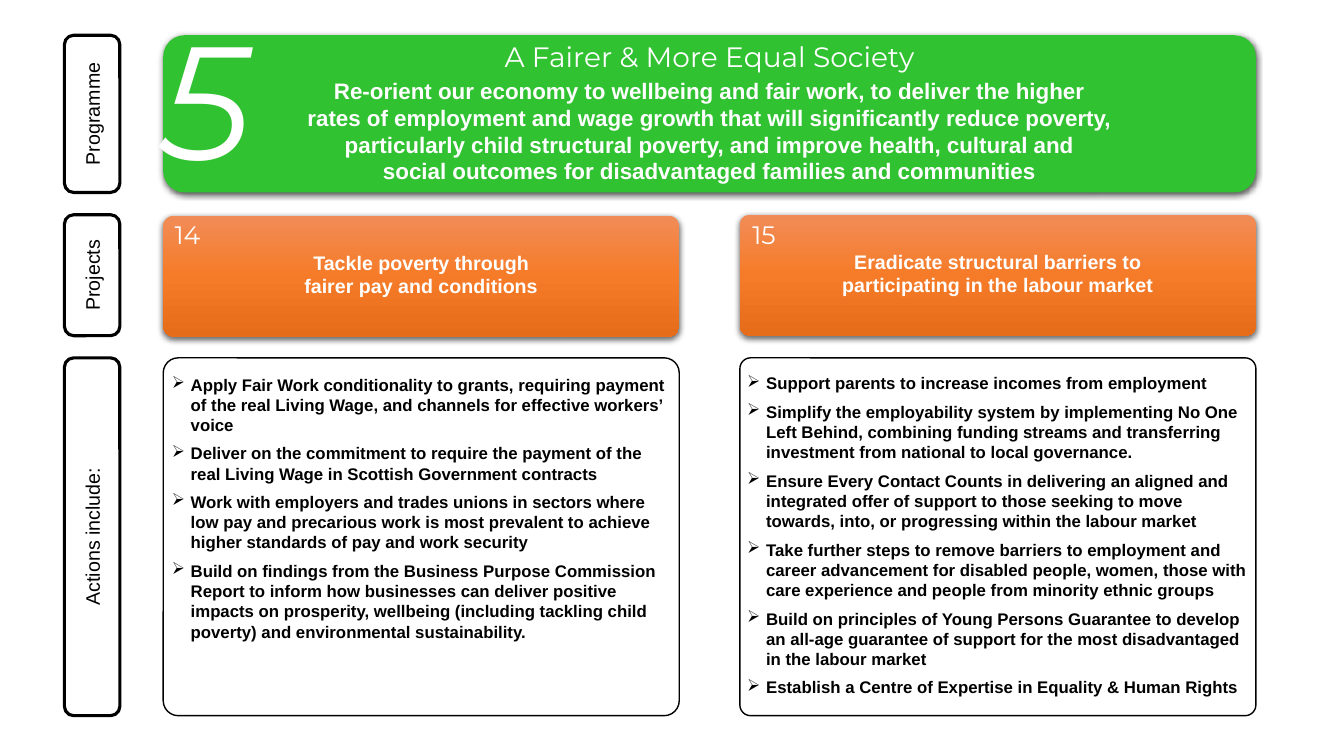
from pptx import Presentation
from pptx.dml.color import RGBColor
from pptx.enum.shapes import MSO_SHAPE as Shape
from pptx.enum.text import MSO_ANCHOR as Anchor, PP_ALIGN as Align
from pptx.oxml import parse_xml
from pptx.oxml.ns import nsdecls, qn
from pptx.util import Pt

BLACK, WHITE, GREEN = "000000", "FFFFFF", "30C230"
ORANGES = ((0, "F18C57"), (50, "F67B28"), (100, "E56C19"))
LABEL_LEFT, LABEL_WIDTH = 46, 39.6
COLUMN_LEFTS, COLUMN_WIDTH = (116.6, 528.5), 368.6
PROGRAMME_ROW, PROJECT_ROW, ACTION_ROW = (25.2, 112.3), (153.4, 86.4), (255.6, 255.6)

PROJECTS = (
    ("14", "Tackle poverty through\nfairer pay and conditions", 0.7, 0.089, 0.042, (
        "Apply Fair Work conditionality to grants, requiring payment of the real Living Wage, "
        "and channels for effective workers’ voice",
        "Deliver on the commitment to require the payment of the real Living Wage in "
        "Scottish Government contracts",
        "Work with employers and trades unions in sectors where low pay and precarious work "
        "is most prevalent to achieve higher standards of pay and work security",
        "Build on findings from the Business Purpose Commission Report to inform how businesses "
        "can deliver positive impacts on prosperity, wellbeing (including tackling child poverty) "
        "and environmental sustainability.")),
    ("15", "Eradicate structural barriers to\nparticipating in the labour market", 0, 0.079, 0.03, (
        "Support parents to increase incomes from employment",
        "Simplify the employability system by implementing No One Left Behind, combining funding "
        "streams and transferring investment from national to local governance.",
        "Ensure Every Contact Counts in delivering an aligned and integrated offer of support to "
        "those seeking to move towards, into, or progressing within the labour market",
        "Take further steps to remove barriers to employment and career advancement for disabled "
        "people, women, those with care experience and people from minority ethnic groups",
        "Build on principles of Young Persons Guarantee to develop an all-age guarantee of support "
        "for the most disadvantaged in the labour market",
        "Establish a Centre of Expertise in Equality & Human Rights")),
)


def color(hex_value):
    return RGBColor.from_string(hex_value)


def set_frame(frame, anchor, insets):
    frame.word_wrap = True
    frame.vertical_anchor = anchor
    (frame.margin_left, frame.margin_top,
     frame.margin_right, frame.margin_bottom) = map(Pt, insets)


def write(paragraph, text, size, ink=WHITE, face="Arial", bold=False, italic=False,
          align=Align.CENTER, after=0):
    paragraph.text = text
    paragraph.alignment = align
    paragraph.space_after = Pt(after)
    font = paragraph.font
    font.name, font.size, font.bold, font.italic = face, Pt(size), bold, italic
    font.color.rgb = color(ink)


def add_panel(slide, box, fill, radius, line_width=0):
    panel = slide.shapes.add_shape(Shape.ROUNDED_RECTANGLE, *map(Pt, box))
    panel.adjustments[0] = radius
    panel.shadow.inherit = False
    panel.fill.solid()
    panel.fill.fore_color.rgb = color(fill)
    if line_width:
        panel.line.color.rgb = color(BLACK)
        panel.line.width = Pt(line_width)
    else:
        panel.line.fill.background()
    return panel


def add_shadow(panel):
    effects = panel._element.spPr.find(qn("a:effectLst"))
    effects.append(parse_xml(
        f'<a:outerShdw {nsdecls("a")} blurRad="{Pt(4.5)}" dist="{Pt(1.5)}" dir="5400000" '
        f'rotWithShape="0"><a:srgbClr val="{BLACK}"><a:alpha val="63000"/></a:srgbClr>'
        '</a:outerShdw>'))


def add_gradient(panel, stops):
    stop_xml = "".join(f'<a:gs pos="{percent * 1000}"><a:srgbClr val="{shade}"/></a:gs>'
                       for percent, shade in stops)
    properties = panel._element.spPr
    properties.replace(properties.find(qn("a:solidFill")), parse_xml(
        f'<a:gradFill {nsdecls("a")} rotWithShape="1"><a:gsLst>{stop_xml}</a:gsLst>'
        '<a:lin ang="5400000" scaled="0"/></a:gradFill>'))


def add_number(slide, box, number, size, italic=False):
    frame = slide.shapes.add_textbox(*map(Pt, box)).text_frame
    set_frame(frame, Anchor.MIDDLE, (7.2, 3.6, 7.2, 3.6))
    write(frame.paragraphs[0], number, size, face="Montserrat", italic=italic)


def add_label(slide, box, caption):
    frame = add_panel(slide, box, WHITE, 0.167, 2.25).text_frame
    set_frame(frame, Anchor.MIDDLE, (3, 0, 3, 0))
    frame._txBody.bodyPr.set("vert", "vert270")
    write(frame.paragraphs[0], caption, 14, BLACK)


def add_programme(slide, box, number, title, aim):
    left, top, _, _ = box
    banner = add_panel(slide, box, GREEN, 0.136)
    add_shadow(banner)
    frame = banner.text_frame
    set_frame(frame, Anchor.MIDDLE, (3, 3, 3, 6))
    write(frame.paragraphs[0], title, 20, face="Montserrat", after=3)
    write(frame.add_paragraph(), aim, 16, bold=True, after=2)
    add_number(slide, (left - 9.3, top + 5, 56.2, 77), number, 115, italic=True)


def add_project(slide, box, number, title, radius):
    left, top, _, _ = box
    card = add_panel(slide, box, WHITE, radius)
    add_gradient(card, ORANGES)
    add_shadow(card)
    set_frame(card.text_frame, Anchor.MIDDLE, (3, 3, 3, 6))
    write(card.text_frame.paragraphs[0], title, 14, bold=True)
    add_number(slide, (left - 4.7, PROJECT_ROW[0] + 1.4, 43.9, 25.2), number, 18)


def add_actions(slide, box, actions, radius):
    frame = add_panel(slide, box, WHITE, radius, 1).text_frame
    set_frame(frame, Anchor.TOP, (3, 8.6, 3, 8.6))
    for index, action in enumerate(actions):
        paragraph = frame.add_paragraph() if index else frame.paragraphs[0]
        write(paragraph, action, 12, BLACK, bold=True, align=Align.LEFT, after=6)
        properties = paragraph._p.get_or_add_pPr()
        properties.set("marL", str(Pt(13.5)))
        properties.set("indent", str(-Pt(13.5)))
        properties.find(qn("a:defRPr")).addprevious(
            parse_xml(f'<a:buChar {nsdecls("a")} char="➢"/>'))


def main():
    deck = Presentation()
    deck.slide_width, deck.slide_height = Pt(960), Pt(540)
    slide = deck.slides.add_slide(deck.slide_layouts[6])

    rows = (PROGRAMME_ROW, PROJECT_ROW, ACTION_ROW)
    for caption, (top, height) in zip(("Programme", "Projects", "Actions include:"), rows):
        add_label(slide, (LABEL_LEFT, top, LABEL_WIDTH, height), caption)

    top, height = PROGRAMME_ROW
    banner_width = COLUMN_LEFTS[-1] + COLUMN_WIDTH - COLUMN_LEFTS[0]
    add_programme(
        slide, (COLUMN_LEFTS[0], top, banner_width, height), "5", "A Fairer & More Equal Society",
        "Re-orient our economy to wellbeing and fair work, to deliver the higher\n"
        "rates of employment and wage growth that will significantly reduce poverty,\n"
        "particularly child structural poverty, and improve health, cultural and\n"
        "social outcomes for disadvantaged families and communities")

    for left, project in zip(COLUMN_LEFTS, PROJECTS):
        number, title, drop, card_radius, list_radius, actions = project
        top, height = PROJECT_ROW
        add_project(slide, (left, top + drop, COLUMN_WIDTH, height), number, title, card_radius)
        top, height = ACTION_ROW
        add_actions(slide, (left, top, COLUMN_WIDTH, height), actions, list_radius)

    deck.save("out.pptx")


if __name__ == "__main__":
    main()
